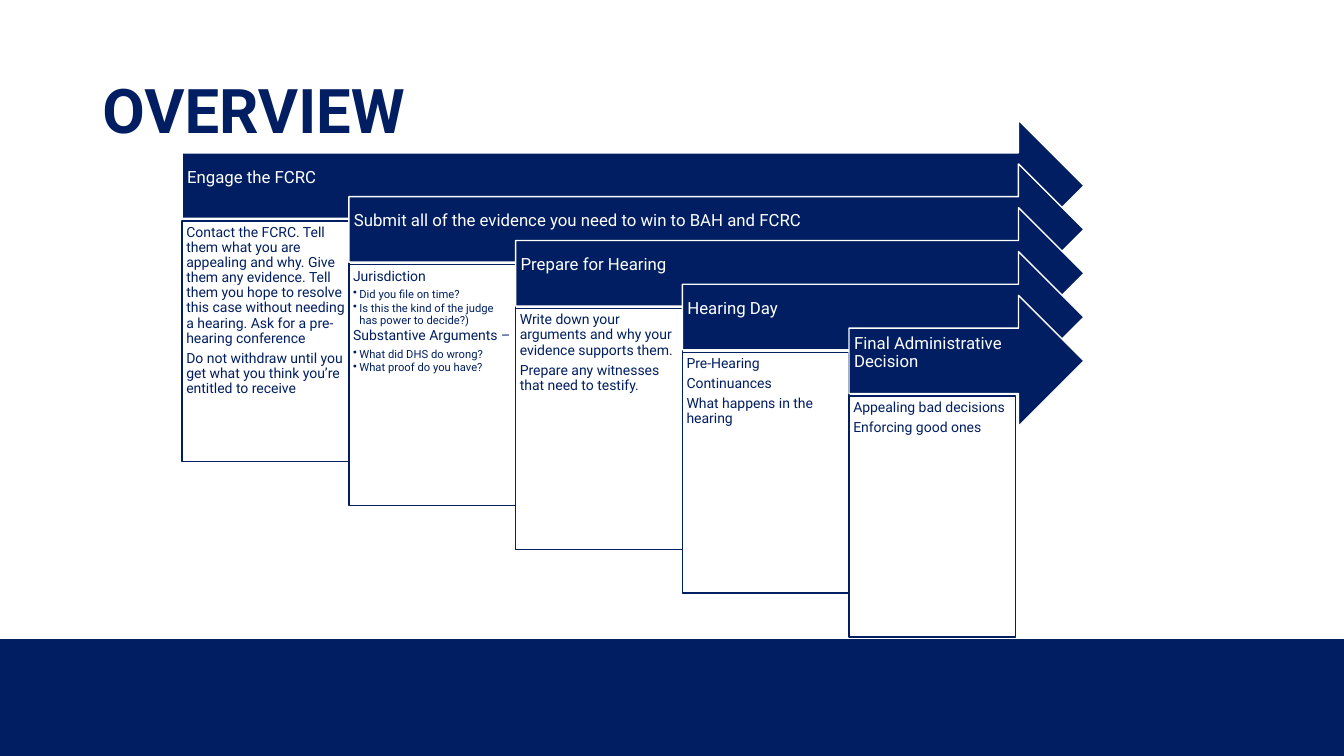
from lxml.etree import SubElement
from pptx import Presentation
from pptx.dml.color import RGBColor
from pptx.enum.shapes import MSO_SHAPE
from pptx.enum.text import MSO_ANCHOR, MSO_AUTO_SIZE, PP_ALIGN
from pptx.oxml.ns import qn
from pptx.util import Pt

NAVY, WHITE = "001E61", "FFFFFF"
FONT = "Roboto"
SLIDE_W, SLIDE_H = 960, 540

# Each stage: heading, then (level, text) lines
STAGES = [
    ("Engage the FCRC", [
        (0, "Contact the FCRC. Tell them what you are appealing and why. Give them any "
            "evidence. Tell them you hope to resolve this case without needing a hearing. "
            "Ask for a pre-hearing conference"),
        (0, "Do not withdraw until you get what you think you’re entitled to receive")]),
    ("Submit all of the evidence you need to win to BAH and FCRC", [
        (0, "Jurisdiction"),
        (1, "Did you file on time?"),
        (1, "Is this the kind of the judge has power to decide?)"),
        (0, "Substantive Arguments –"),
        (1, "What did DHS do wrong?"),
        (1, "What proof do you have?")]),
    ("Prepare for Hearing", [
        (0, "Write down your arguments and why your evidence supports them."),
        (0, "Prepare any witnesses that need to testify.")]),
    ("Hearing Day", [
        (0, "Pre-Hearing"),
        (0, "Continuances"),
        (0, "What happens in the hearing")]),
    ("Final Administrative Decision", [
        (0, "Appealing bad decisions"),
        (0, "Enforcing good ones")]),
]


def rgb(value):
    return RGBColor.from_string(value)


def add_text(p, text, size=10, color=NAVY, bold=False, after=0, bullet=False):
    if bullet:
        pPr = p._p.get_or_add_pPr()
        pPr.set("marL", str(Pt(4.5)))
        pPr.set("indent", str(-Pt(4.5)))
        SubElement(pPr, qn("a:buChar")).set("char", "•")
    p.alignment = PP_ALIGN.LEFT
    p.line_spacing = 0.9
    p.space_after = Pt(after)
    r = p.add_run()
    r.text = text
    r.font.name, r.font.size, r.font.bold = FONT, Pt(size), bold
    r.font.color.rgb = rgb(color)


def add_block(slide, shape_type, box, fill, line=None):
    sp = slide.shapes.add_shape(shape_type, *map(Pt, box))
    sp.shadow.inherit = False
    sp.fill.solid()
    sp.fill.fore_color.rgb = rgb(fill)
    if line:
        sp.line.color.rgb = rgb(line)
        sp.line.width = Pt(1)
    else:
        sp.line.fill.background()
    return sp


def set_frame(tf, anchor, left, top, right, bottom):
    tf.word_wrap = True
    tf.vertical_anchor = anchor
    tf.margin_left, tf.margin_top = Pt(left), Pt(top)
    tf.margin_right, tf.margin_bottom = Pt(right), Pt(bottom)


def add_title(slide, box, text):
    title = slide.shapes.title
    title.left, title.top, title.width, title.height = map(Pt, box)
    tf = title.text_frame
    tf.auto_size = MSO_AUTO_SIZE.NONE
    set_frame(tf, MSO_ANCHOR.MIDDLE, 7.2, 3.6, 7.2, 3.6)
    add_text(tf.paragraphs[0], text, size=44, bold=True)


def add_arrow(slide, box, heading):
    sp = add_block(slide, MSO_SHAPE.RIGHT_ARROW, box, NAVY, WHITE)
    set_frame(sp.text_frame, MSO_ANCHOR.MIDDLE, 3.6, 3.6, 20, 15)
    add_text(sp.text_frame.paragraphs[0], heading, size=12, color=WHITE)


def add_details(slide, box, lines):
    sp = add_block(slide, MSO_SHAPE.RECTANGLE, box, WHITE, NAVY)
    tf = sp.text_frame
    set_frame(tf, MSO_ANCHOR.TOP, 3, 3, 3, 3)
    for i, (level, text) in enumerate(lines):
        p = tf.add_paragraph() if i else tf.paragraphs[0]
        if level:
            add_text(p, text, size=8, after=1.2, bullet=True)
        else:
            add_text(p, text, after=3.5)


def add_stages(slide, box, stages):
    """Staircase of arrows that end at one right edge, each with a box below."""
    left, top, width, height = box
    step_x, step_y, arrow_h, details_y = 119.1, 31.3, 93.6, 72
    details_h = height - details_y - step_y * (len(stages) - 1)
    for i, (heading, lines) in enumerate(stages):
        x, y = left + i * step_x, top + i * step_y
        add_arrow(slide, (x, y, left + width - x, arrow_h), heading)
        add_details(slide, (x, y + details_y, step_x, details_h), lines)


def main():
    prs = Presentation()
    prs.slide_width, prs.slide_height = Pt(SLIDE_W), Pt(SLIDE_H)
    slide = prs.slides.add_slide(prs.slide_layouts[5])
    footer_y = 456.6
    add_block(slide, MSO_SHAPE.RECTANGLE,
              (0, footer_y, SLIDE_W, SLIDE_H - footer_y), NAVY)
    add_title(slide, (66, 28.8, 828, 104.4), "OVERVIEW")
    add_stages(slide, (130.1, 85.8, 644.2, 369.2), STAGES)
    prs.save("out.pptx")


if __name__ == "__main__":
    main()
